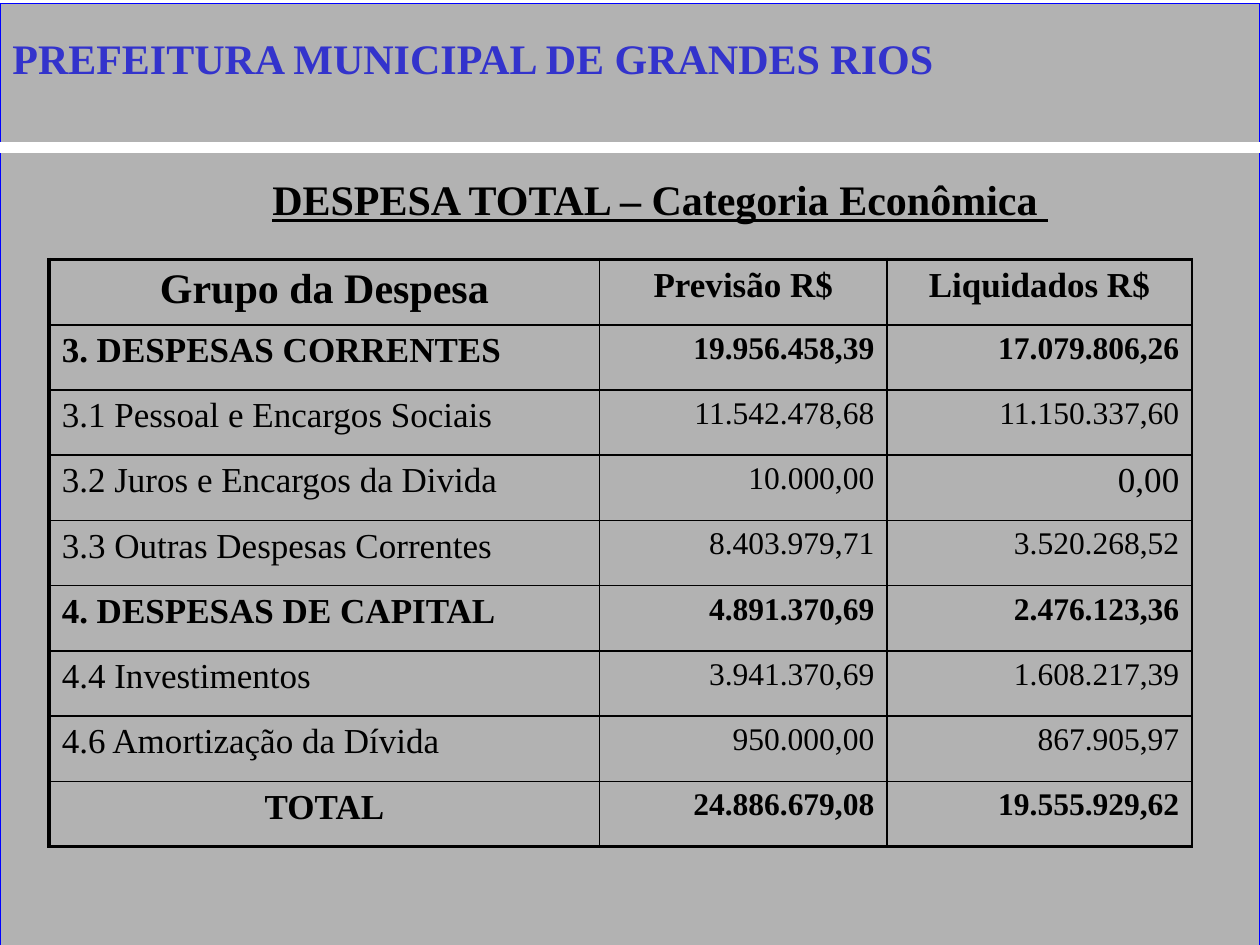
from typing import NamedTuple

from lxml.etree import SubElement
from pptx import Presentation
from pptx.dml.color import RGBColor
from pptx.enum.shapes import MSO_CONNECTOR, MSO_SHAPE
from pptx.enum.text import MSO_ANCHOR, MSO_AUTO_SIZE, PP_ALIGN
from pptx.oxml.ns import qn
from pptx.util import Inches, Pt

FONT = "Times New Roman"
BLACK = "000000"
THIN, THICK = 1, 2.25
COLUMN_WIDTHS = (4.37, 2.28, 2.42)
TABLE_HEIGHT = 4.66


class Expense(NamedTuple):
    group: str
    planned: str
    settled: str
    bold: bool = False
    group_align: PP_ALIGN = PP_ALIGN.LEFT
    amount_align: PP_ALIGN = PP_ALIGN.RIGHT
    sizes: tuple[int, int, int] = (20, 18, 18)


EXPENSES = [
    Expense("Grupo da Despesa", "Previsão R$", "Liquidados R$", True,
            PP_ALIGN.CENTER, PP_ALIGN.CENTER, (24, 20, 20)),
    Expense("3. DESPESAS CORRENTES", "19.956.458,39", "17.079.806,26", True),
    Expense("3.1 Pessoal e Encargos Sociais", "11.542.478,68", "11.150.337,60"),
    Expense("3.2 Juros e Encargos da Divida", "10.000,00", "0,00", sizes=(20, 18, 20)),
    Expense("3.3 Outras Despesas Correntes", "8.403.979,71", "3.520.268,52"),
    Expense("4. DESPESAS DE CAPITAL", "4.891.370,69", "2.476.123,36", True),
    Expense("4.4 Investimentos", "3.941.370,69", "1.608.217,39"),
    Expense("4.6 Amortização da Dívida", "950.000,00", "867.905,97"),
    Expense("TOTAL", "24.886.679,08", "19.555.929,62", True, PP_ALIGN.CENTER),
]


def rgb(color: str) -> RGBColor:
    return RGBColor.from_string(color)


def write(frame, text: str, size: float, color: str = BLACK, bold: bool = True,
          align: PP_ALIGN = PP_ALIGN.LEFT):
    paragraph = frame.paragraphs[0]
    paragraph.alignment = align
    run = paragraph.add_run()
    run.text = text
    run.font.name = FONT
    run.font.size = Pt(size)
    run.font.bold = bold
    run.font.color.rgb = rgb(color)
    return run


def fit_to_text(frame) -> None:
    frame.word_wrap = True
    frame.auto_size = MSO_AUTO_SIZE.SHAPE_TO_FIT_TEXT
    frame.vertical_anchor = MSO_ANCHOR.TOP


def add_text_shadow(run) -> None:
    effects = SubElement(run.font.fill._xPr, qn("a:effectLst"))
    run.font.fill._xPr.find(qn("a:solidFill")).addnext(effects)
    shadow = SubElement(effects, qn("a:outerShdw"), dist="38100", dir="2700000")
    SubElement(shadow, qn("a:srgbClr"), val="808080")


def add_border(cell, side: str, width: float) -> None:
    line = SubElement(cell._tc.get_or_add_tcPr(), qn(f"a:ln{side}"), w=str(Pt(width)))
    fill = SubElement(line, qn("a:solidFill"))
    SubElement(fill, qn("a:srgbClr"), val=BLACK)


def add_backdrop(slide) -> None:
    panel = slide.shapes.add_shape(
        MSO_SHAPE.RECTANGLE, 0, Inches(0.03), Inches(10), Inches(7.5))
    panel.shadow.inherit = False
    panel.fill.solid()
    panel.fill.fore_color.rgb = rgb("B2B2B2")
    panel.line.color.rgb = rgb("0000FF")
    panel.line.width = Pt(0.75)

    divider = slide.shapes.add_connector(
        MSO_CONNECTOR.STRAIGHT, 0, Inches(1.17), Inches(10), Inches(1.17))
    divider.line.color.rgb = rgb("FFFFFF")
    divider.line.width = Pt(6)
    SubElement(divider.element.spPr, qn("a:effectLst"))


def add_headings(slide) -> None:
    title = slide.shapes.title
    title.left, title.top = Inches(1.38), Inches(1.33)
    title.width, title.height = Inches(7.72), Inches(0.5)
    fit_to_text(title.text_frame)
    heading = write(title.text_frame, "DESPESA TOTAL – Categoria Econômica ", 24,
                    align=PP_ALIGN.CENTER)
    heading.font.underline = True
    # The title placeholder must lie in front of the backdrop
    title.element.getparent().append(title.element)

    city = slide.shapes.add_textbox(0, Inches(0.21), Inches(9.49), Inches(0.5))
    fit_to_text(city.text_frame)
    add_text_shadow(write(city.text_frame, "PREFEITURA MUNICIPAL DE GRANDES RIOS",
                          24, "3333CC"))


def add_expense_table(slide, expenses: list[Expense]) -> None:
    table = slide.shapes.add_table(
        len(expenses), len(COLUMN_WIDTHS), Inches(0.39), Inches(2.06),
        Inches(sum(COLUMN_WIDTHS)), Inches(TABLE_HEIGHT)).table
    table.first_row = table.horz_banding = False
    for column, width in zip(table.columns, COLUMN_WIDTHS):
        column.width = Inches(width)

    last = len(expenses) - 1
    for r, expense in enumerate(expenses):
        table.rows[r].height = Inches(TABLE_HEIGHT / len(expenses))
        texts = (expense.group, expense.planned, expense.settled)
        aligns = (expense.group_align, expense.amount_align, expense.amount_align)
        for c, (text, align, size) in enumerate(zip(texts, aligns, expense.sizes)):
            cell = table.cell(r, c)
            write(cell.text_frame, text, size, bold=expense.bold, align=align)
            add_border(cell, "L", THICK if c == 0 else THIN)
            add_border(cell, "R", THIN)
            add_border(cell, "T", THICK if r == 0 else THIN)
            add_border(cell, "B", THICK if r == last else THIN)
            cell.fill.background()


def main() -> None:
    presentation = Presentation()
    presentation.slide_width, presentation.slide_height = Inches(10), Inches(7.5)
    slide = presentation.slides.add_slide(presentation.slide_layouts[5])
    add_backdrop(slide)
    add_headings(slide)
    add_expense_table(slide, EXPENSES)
    presentation.save("out.pptx")


if __name__ == "__main__":
    main()
